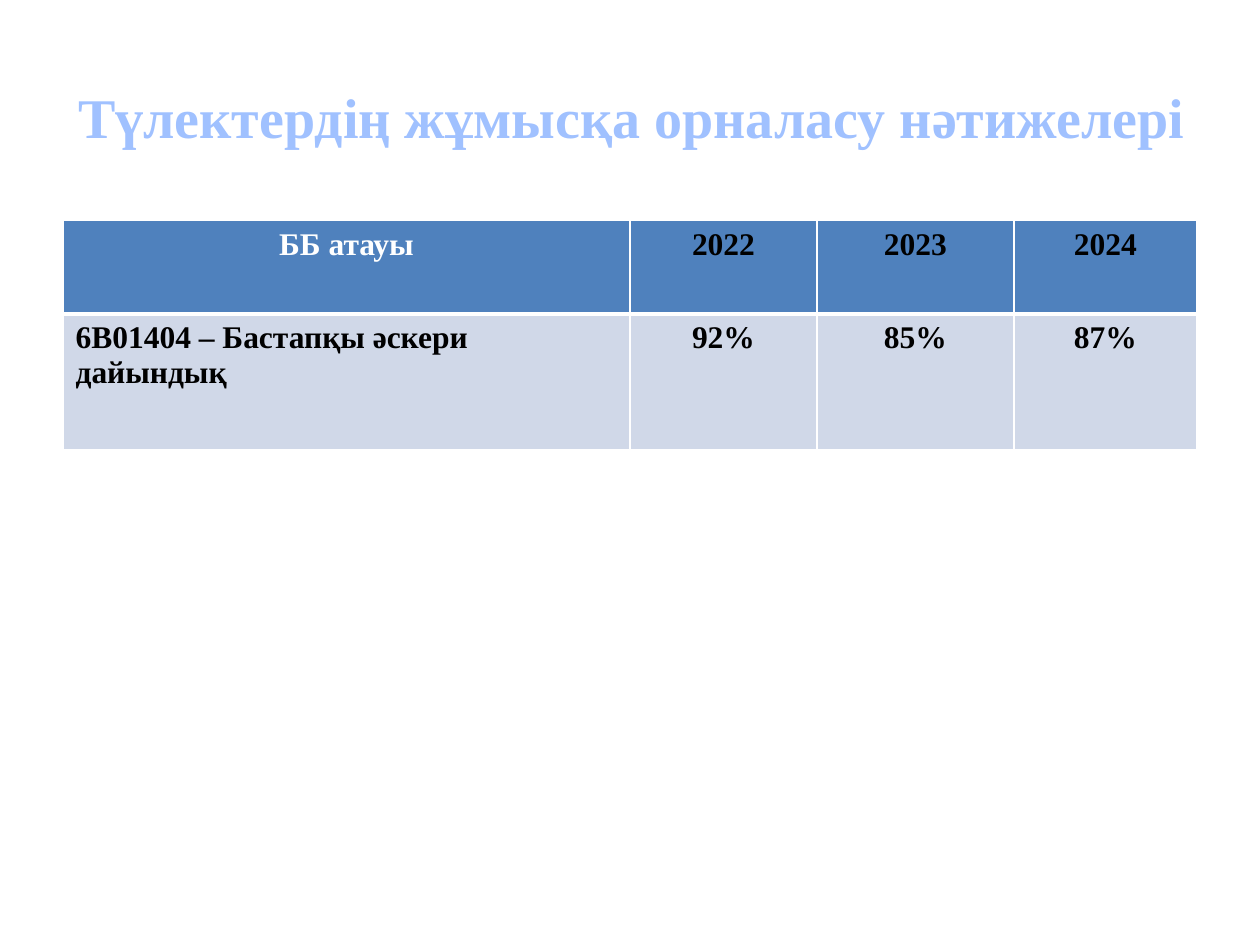
from lxml.etree import SubElement
from pptx import Presentation
from pptx.dml.color import RGBColor
from pptx.enum.text import MSO_ANCHOR, PP_ALIGN
from pptx.oxml.ns import qn
from pptx.util import Cm, Pt


def write(tf, text, size=18, color="000000", align=PP_ALIGN.CENTER):
    p = tf.paragraphs[0]
    p.alignment = align
    r = p.add_run()
    r.text = text
    r.font.name = "Times New Roman"
    r.font.size = Pt(size)
    r.font.bold = True
    r.font.color.rgb = RGBColor.from_string(color)


def set_border(cell, side, width, color="FFFFFF"):
    ln = SubElement(cell._tc.get_or_add_tcPr(), qn(f"a:ln{side}"), w=str(Pt(width)))
    fill = SubElement(ln, qn("a:solidFill"))
    SubElement(fill, qn("a:srgbClr"), val=color)


prs = Presentation()
prs.slide_width, prs.slide_height = Cm(25.4), Cm(19.05)
s = prs.slides.add_slide(prs.slide_layouts[5])

# Title
title = s.shapes.title
title.left, title.top, title.width, title.height = Cm(1.27), Cm(0.76), Cm(22.94), Cm(3.18)
tf = title.text_frame
tf.word_wrap = True
tf.vertical_anchor = MSO_ANCHOR.MIDDLE
write(tf, "Түлектердің жұмысқа орналасу нәтижелері", size=32, color="A0C1FF")

# Employment table
rows = [
    ["ББ атауы", "2022", "2023", "2024"],
    ["6В01404 – Бастапқы әскери дайындық", "92%", "85%", "87%"],
]
widths = [11.43, 3.77, 3.97, 3.69]
heights = [1.88, 2.74]
fills = ["4F81BD", "D0D8E8"]
table = s.shapes.add_table(len(rows), len(widths), Cm(1.27), Cm(4.45),
                           Cm(sum(widths)), Cm(sum(heights))).table
for column, width in zip(table.columns, widths):
    column.width = Cm(width)

for i, values in enumerate(rows):
    table.rows[i].height = Cm(heights[i])
    for j, value in enumerate(values):
        cell = table.cell(i, j)
        color = "FFFFFF" if i == j == 0 else "000000"
        align = PP_ALIGN.LEFT if i == 1 and j == 0 else PP_ALIGN.CENTER
        write(cell.text_frame, value, color=color, align=align)
        # White rules, thicker between the header and the body
        for side in "LRTB":
            thick = (i, side) in [(0, "B"), (1, "T")]
            set_border(cell, side, 3 if thick else 1)
        cell.fill.solid()
        cell.fill.fore_color.rgb = RGBColor.from_string(fills[i])

prs.save("out.pptx")
